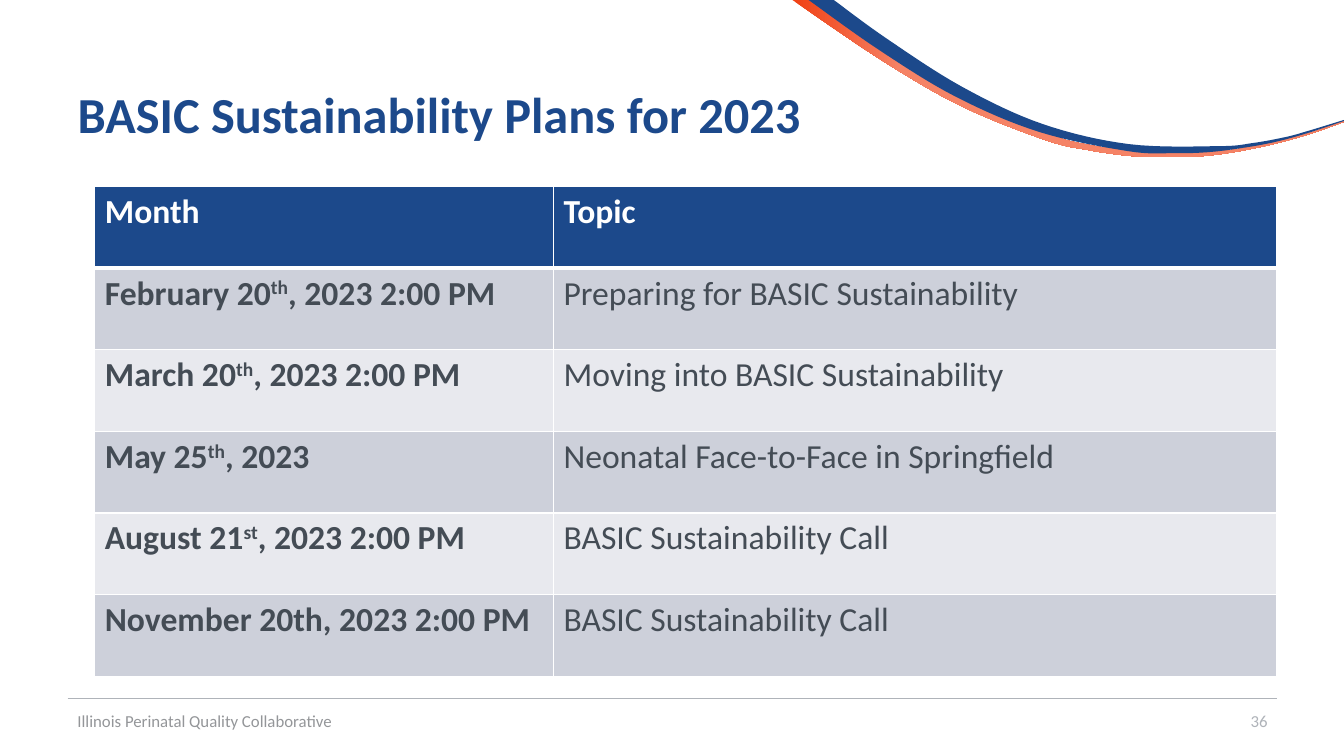
import pptx
import pptx.util
import pptx.dml.color
import pptx.enum.shapes
import pptx.enum.text
from lxml import etree

RGB = pptx.dml.color.RGBColor
ALIGN = pptx.enum.text.PP_ALIGN
MIDDLE = pptx.enum.text.MSO_ANCHOR.MIDDLE

# Colours
NAVY = RGB(0x1C, 0x49, 0x8B)
ORANGE = RGB(0xF0, 0x41, 0x15)
SALMON = RGB(0xF5, 0x83, 0x66)
WHITE = RGB(0xFF, 0xFF, 0xFF)
INK = RGB(0x44, 0x4C, 0x55)
BANDS = [RGB(0xCD, 0xD0, 0xDA), RGB(0xE8, 0xE9, 0xEE)]
RULE = RGB(0xAF, 0xB3, 0xB9)
GREY = RGB(0x94, 0x96, 0x99)

# Content: ^ marks off raised text
TITLE = "BASIC Sustainability Plans for 2023"
ROWS = [
    ("Month", "Topic"),
    ("February 20^th^, 2023 2:00 PM", "Preparing for BASIC Sustainability"),
    ("March 20^th^, 2023 2:00 PM", "Moving into BASIC Sustainability"),
    ("May 25^th^, 2023", "Neonatal Face-to-Face in Springfield"),
    ("August 21^st^, 2023 2:00 PM", "BASIC Sustainability Call"),
    ("November 20th, 2023 2:00 PM", "BASIC Sustainability Call"),
]
FOOT = [
    ("36", (967, 695, 300, 40), ALIGN.RIGHT, RULE),
    ("Illinois Perinatal Quality Collaborative", (67, 695, 450, 40), ALIGN.LEFT, GREY),
]

# Layout in px, 100 to the inch
PX = 9144
WIDE, HIGH = 1333, 750
TITLE_BOX = (67, 40, 1200, 145)
LEFT, TOP, ROW_H = 94, 185, 81
COLS = [455, 717]

# Each ribbon: points along its upper edge, then its lower edge
RIBBONS = [
    ([(805, 0), (882, 54), (958, 99), (1039, 133), (1081, 144), (1125, 150),
      (1168, 152), (1201, 151), (1234, 147), (1267, 140), (1299, 132), (1333, 120)],
     [(1333, 121), (1299, 133), (1267, 142), (1235, 149), (1202, 154), (1169, 156),
      (1124, 155), (1080, 149), (1037, 139), (955, 106), (878, 62), (786, 0)],
     [ORANGE, SALMON]),
    ([(827, 0), (879, 38), (954, 86), (1034, 123), (1120, 143), (1209, 145),
      (1242, 142), (1275, 136), (1297, 130), (1333, 119)],
     [(1333, 120), (1297, 132), (1264, 141), (1231, 147), (1198, 151), (1164, 152),
      (1119, 150), (1031, 131), (948, 96), (871, 49), (802, 0)],
     [NAVY]),
]


def emu(box):
    return [n * PX for n in box]


def style(font, size, color, bold=False):
    form = {"name": "Calibri", "size": pptx.util.Pt(size), "bold": bold}
    for key, value in form.items():
        setattr(font, key, value)
    font.color.rgb = color


def write(frame, text, size, color, bold=False, align=ALIGN.LEFT):
    para = frame.paragraphs[0]
    para.alignment = align
    for i, part in enumerate(text.split("^")):
        run = para.add_run()
        run.text = part
        style(run.font, size, color, bold)
        if i % 2:
            run._r.get_or_add_rPr().set("baseline", "30000")


def smooth(knots, steps=8):
    """Points of a smooth curve through the knots, in EMU."""
    ends = [knots[0]] + knots + [knots[-1]]
    out = []
    for a, b, c, d in zip(ends, ends[1:], ends[2:], ends[3:]):
        for k in range(steps):
            t = k / steps
            out.append(tuple(
                PX * (q + t * (r - p) / 2 + t**2 * (2*p - 5*q + 4*r - s) / 2
                      + t**3 * (3*q - p - 3*r + s) / 2)
                for p, q, r, s in zip(a, b, c, d)))
    return out + [tuple(emu(knots[-1]))]


def border(cell, sides):
    props = cell._tc.get_or_add_tcPr()
    for side, width in sides.items():
        line = etree.SubElement(props, pptx.oxml.ns.qn("a:ln" + side), w=str(width * 12700))
        fill = etree.SubElement(line, pptx.oxml.ns.qn("a:solidFill"))
        etree.SubElement(fill, pptx.oxml.ns.qn("a:srgbClr"), val=str(WHITE))


def main():
    deck = pptx.Presentation()
    deck.slide_width, deck.slide_height = emu((WIDE, HIGH))
    slide = deck.slides.add_slide(deck.slide_layouts[5])
    shapes = slide.shapes

    # Corner ribbons
    for upper, lower, hues in RIBBONS:
        points = smooth(upper) + smooth(lower)
        pen = shapes.build_freeform(*points[0], scale=1.0)
        pen.add_line_segments(points[1:], close=True)
        ribbon = pen.convert_to_shape()
        ribbon.shadow.inherit = False
        ribbon.line.fill.background()
        if len(hues) == 1:
            ribbon.fill.solid()
            ribbon.fill.fore_color.rgb = hues[0]
        else:
            ribbon.fill.gradient()
            ribbon.fill.gradient_angle = 0
            for stop, hue, place in zip(ribbon.fill.gradient_stops, hues, (0, 0.2)):
                stop.color.rgb = hue
                stop.position = place

    # Footer rule
    rule = shapes.add_connector(pptx.enum.shapes.MSO_CONNECTOR.STRAIGHT,
                                *emu((67, 693, 1267, 693)))
    rule.line.color.rgb = RULE
    rule.line.width = pptx.util.Pt(0.5)
    etree.SubElement(rule._element.spPr, pptx.oxml.ns.qn("a:effectLst"))

    # Title
    title = shapes.title
    title.left, title.top, title.width, title.height = emu(TITLE_BOX)
    title.text_frame.vertical_anchor = MIDDLE
    title.text_frame.auto_size = pptx.enum.text.MSO_AUTO_SIZE.NONE
    write(title.text_frame, TITLE, 36, NAVY, True)

    # Footer text
    for text, box, align, color in FOOT:
        frame = shapes.add_textbox(*emu(box)).text_frame
        frame.word_wrap = True
        frame.vertical_anchor = MIDDLE
        write(frame, text, 12, color, align=align)

    # Schedule table
    size = (sum(COLS), ROW_H * len(ROWS))
    table = shapes.add_table(len(ROWS), len(COLS), *emu((LEFT, TOP) + size)).table
    for col, width in zip(table.columns, COLS):
        col.width = width * PX
    for r, row in enumerate(ROWS):
        table.rows[r].height = ROW_H * PX
        for c, text in enumerate(row):
            cell = table.cell(r, c)
            head = r == 0
            border(cell, {"L": 1, "R": 1, "T": 3 if r == 1 else 1, "B": 3 if head else 1})
            cell.fill.solid()
            cell.fill.fore_color.rgb = NAVY if head else BANDS[(r - 1) % 2]
            write(cell.text_frame, text, 24, WHITE if head else INK, head or c == 0)

    deck.save("out.pptx")


if __name__ == "__main__":
    main()
